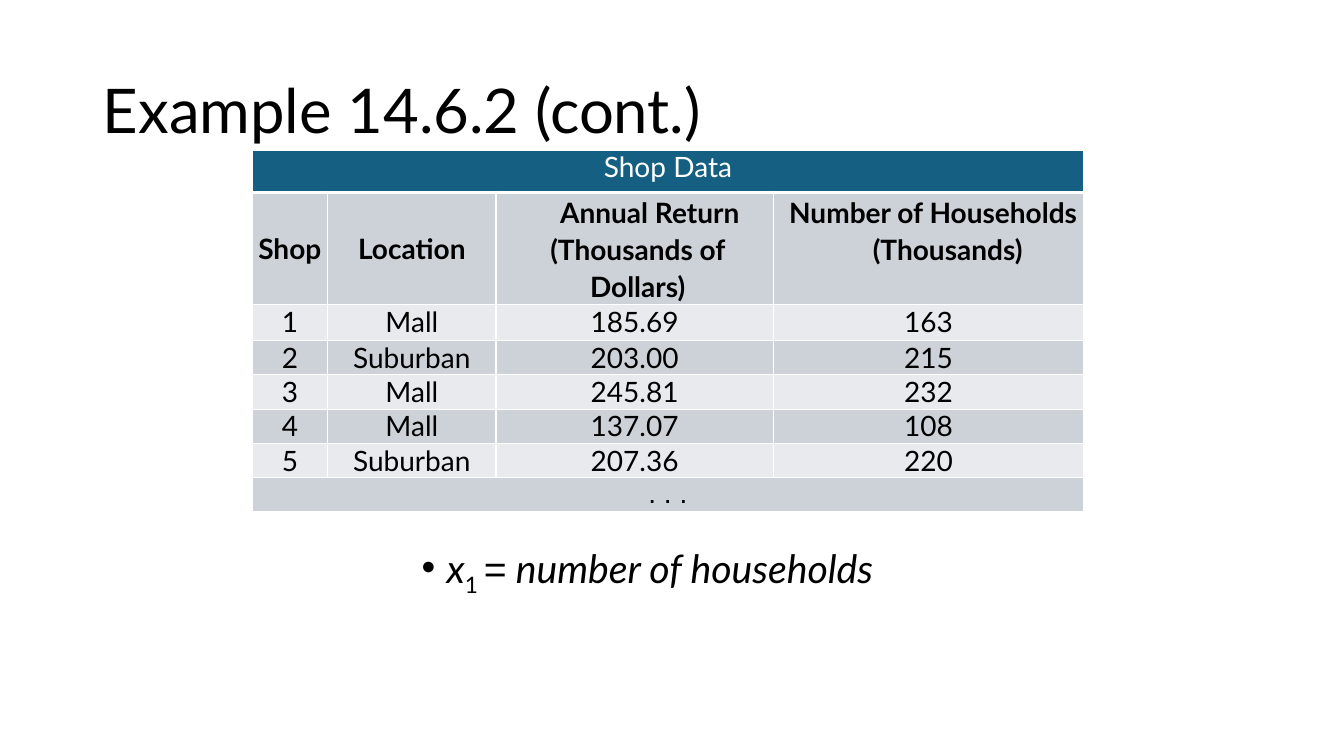
import pptx
import pptx.dml.color
import pptx.enum.text
import pptx.util
from lxml import etree
from pptx.oxml.ns import qn

Inches = pptx.util.Inches
Pt = pptx.util.Pt
ALIGN = pptx.enum.text.PP_ALIGN
ANCHOR = pptx.enum.text.MSO_ANCHOR

BLACK, WHITE, BLUE = "000000", "FFFFFF", "156082"
DARK_BAND, LIGHT_BAND = "CCD2D8", "E8EAED"

COLUMN_WIDTHS = [0.75, 1.67, 2.75, 3.08]
ROW_HEIGHTS = [0.42, 1.11, 0.36, 0.34, 0.34, 0.34, 0.34, 0.31]
HEADINGS = [
    ["Shop"],
    ["Location"],
    ["Annual ", "Return ", "(Thousands ", "of Dollars)"],
    ["Number ", "of Households ", "(Thousands)"],
]
# Left margin and first-line indent of the headings that wrap
HEADING_INDENTS = {2: (0.06, 0.24), 3: (0.38, -0.29)}
SHOPS = [
    ("1", "Mall", "185.69", "163"),
    ("2", "Suburban", "203.00", "215"),
    ("3", "Mall", "245.81", "232"),
    ("4", "Mall", "137.07", "108"),
    ("5", "Suburban", "207.36", "220"),
]


def color(value):
    return pptx.dml.color.RGBColor.from_string(value)


def add_run(paragraph, text, size, font="Lato", fill=BLACK, bold=False, italic=False):
    run = paragraph.add_run()
    run.text = text
    run.font.name = font
    run.font.size = Pt(size)
    run.font.bold = bold
    run.font.italic = italic
    run.font.color.rgb = color(fill)
    return run


def set_indent(paragraph, left, first):
    properties = paragraph._p.get_or_add_pPr()
    properties.set("marL", str(Inches(left)))
    properties.set("indent", str(Inches(first)))
    return properties


def style_cell(cell, fill, thick_bottom=False):
    cell.margin_left = cell.margin_right = cell.margin_top = cell.margin_bottom = 0
    properties = cell._tc.get_or_add_tcPr()
    for side in ("lnL", "lnR", "lnT", "lnB"):
        width = 3 if thick_bottom and side == "lnB" else 1
        line = etree.SubElement(properties, qn("a:" + side), w=str(Pt(width)))
        solid = etree.SubElement(line, qn("a:solidFill"))
        etree.SubElement(solid, qn("a:srgbClr"), val=WHITE)
    cell.fill.solid()
    cell.fill.fore_color.rgb = color(fill)


def fill_cell(cell, texts, **font):
    paragraph = cell.text_frame.paragraphs[0]
    paragraph.alignment = ALIGN.CENTER
    for text in texts:
        add_run(paragraph, text, 20, **font)
    return paragraph


def add_title(slide, left, top, width, height):
    title = slide.shapes.title
    title.left, title.top = Inches(left), Inches(top)
    title.width, title.height = Inches(width), Inches(height)
    frame = title.text_frame
    frame.auto_size = pptx.enum.text.MSO_AUTO_SIZE.NONE
    frame.vertical_anchor = ANCHOR.MIDDLE
    paragraph = frame.paragraphs[0]
    paragraph.alignment = ALIGN.LEFT
    paragraph.line_spacing = 0.9
    add_run(paragraph, "Example 14.6.2 (cont.)", 44)


def add_shop_table(slide, left, top):
    table = slide.shapes.add_table(
        len(ROW_HEIGHTS), len(COLUMN_WIDTHS), Inches(left), Inches(top),
        Inches(sum(COLUMN_WIDTHS)), Inches(sum(ROW_HEIGHTS))).table
    for column, width in zip(table.columns, COLUMN_WIDTHS):
        column.width = Inches(width)
    last = len(ROW_HEIGHTS) - 1
    for index, height in enumerate(ROW_HEIGHTS):
        table.rows[index].height = Inches(height)
        band = BLUE if index == 0 else DARK_BAND if index % 2 else LIGHT_BAND
        for cell in table.rows[index].cells:
            style_cell(cell, band, thick_bottom=index == 0)

    # Full-width first and last rows
    for index in (0, last):
        table.cell(index, 0).merge(table.cell(index, len(COLUMN_WIDTHS) - 1))
    fill_cell(table.cell(0, 0), ["Shop Data"], fill=WHITE)
    fill_cell(table.cell(last, 0), [". . ."], font="Arial")

    # Column headings
    for index, texts in enumerate(HEADINGS):
        cell = table.cell(1, index)
        paragraph = fill_cell(cell, texts, bold=True)
        if index in HEADING_INDENTS:
            set_indent(paragraph, *HEADING_INDENTS[index])
            paragraph.line_spacing = 1.1
        else:
            cell.vertical_anchor = ANCHOR.MIDDLE

    # Shop values
    for row, shop in enumerate(SHOPS, start=2):
        for column, value in enumerate(shop):
            fill_cell(table.cell(row, column), [value])


def add_variable_note(slide, left, top, width, height):
    box = slide.shapes.add_textbox(Inches(left), Inches(top), Inches(width), Inches(height))
    frame = box.text_frame
    frame.word_wrap = True
    frame.margin_left = frame.margin_right = frame.margin_top = frame.margin_bottom = 0
    frame.vertical_anchor = ANCHOR.MIDDLE
    paragraph = frame.paragraphs[0]
    paragraph.alignment = ALIGN.CENTER
    paragraph.line_spacing = 0.9
    properties = set_indent(paragraph, 0.25, -0.25)
    etree.SubElement(properties, qn("a:buFont"), typeface="Arial")
    etree.SubElement(properties, qn("a:buChar"), char="•")
    add_run(paragraph, "x", 28, italic=True)
    subscript = add_run(paragraph, "1 ", 28)
    subscript.font._element.set("baseline", "-25000")
    add_run(paragraph, "=", 28, font="Arial")
    add_run(paragraph, " number of households", 28, italic=True)


def main():
    presentation = pptx.Presentation()
    presentation.slide_width = Inches(13.33)
    presentation.slide_height = Inches(7.5)
    slide = presentation.slides.add_slide(presentation.slide_layouts[5])
    add_title(slide, 0.92, 0.4, 11.5, 1.45)
    add_variable_note(slide, 4.17, 5.4, 4.5, 0.5)
    add_shop_table(slide, 2.5, 1.49)
    presentation.save("out.pptx")


if __name__ == "__main__":
    main()
